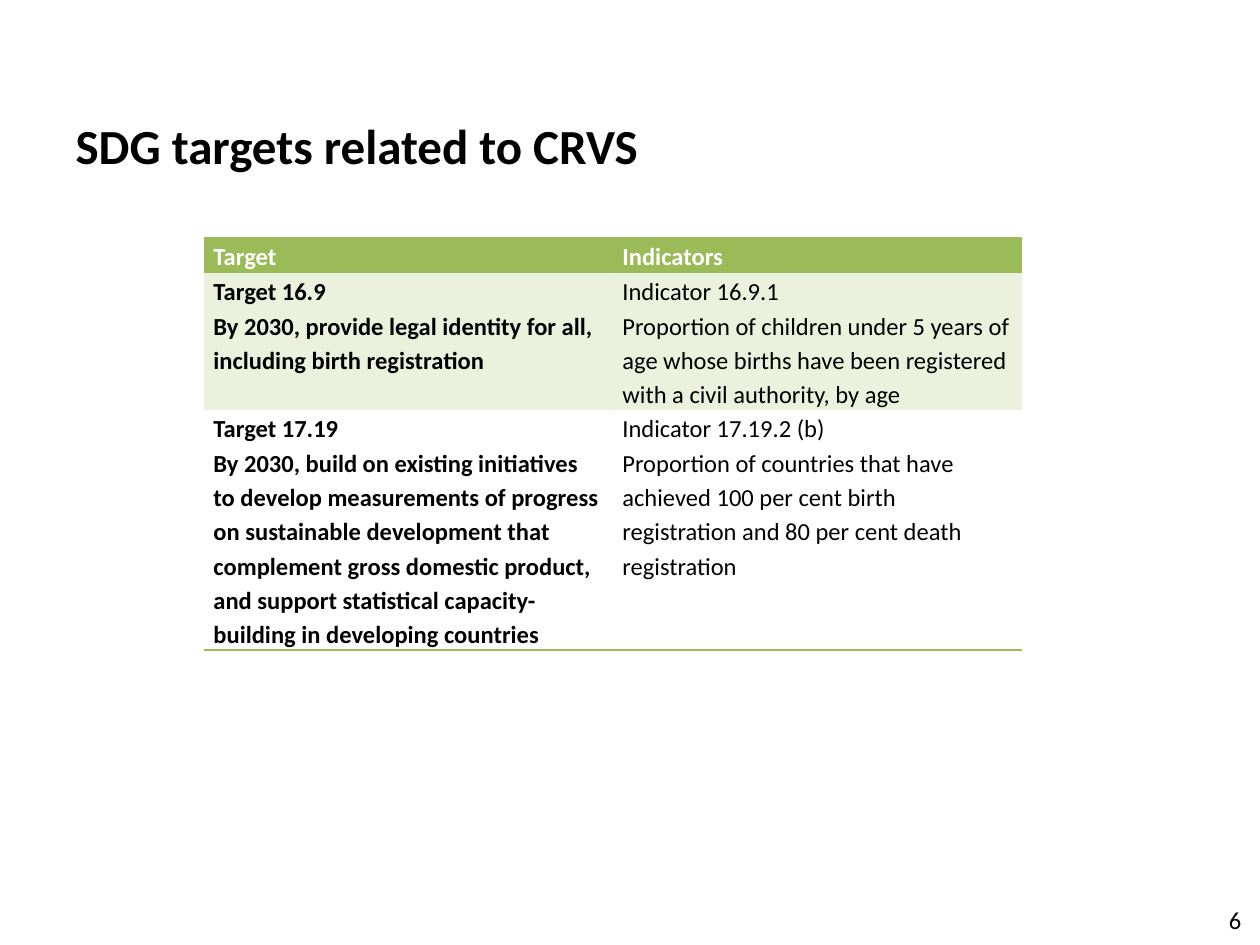
import dataclasses

import lxml.etree
import pptx
import pptx.dml.color
import pptx.enum.text
import pptx.oxml.ns
import pptx.util

Pt = pptx.util.Pt
PP_ALIGN = pptx.enum.text.PP_ALIGN
MSO_ANCHOR = pptx.enum.text.MSO_ANCHOR
NO_STYLE_ID = "{2D5ABB26-0587-4C30-8999-92F81FD0307C}"

HEADINGS = ["Target", "Indicators"]
GOALS = [
    [
        ["Target 16.9",
         "By 2030, provide legal identity for all, including birth registration"],
        ["Indicator 16.9.1",
         "Proportion of children under 5 years of age whose births have been "
         "registered with a civil authority, by age"],
    ],
    [
        ["Target 17.19",
         "By 2030, build on existing initiatives to develop measurements of "
         "progress on sustainable development that complement gross domestic "
         "product, and support statistical capacity-building in developing countries"],
        ["Indicator 17.19.2 (b)",
         "Proportion of countries that have achieved 100 per cent birth "
         "registration and 80 per cent death registration"],
    ],
]
ROW_HEIGHTS = [20, 78, 137]


@dataclasses.dataclass(frozen=True)
class Theme:
    """Colours, font and type sizes of the slide."""
    font: str = "Calibri"
    text: str = "000000"
    reverse: str = "FFFFFF"
    accent: str = "9BBB59"
    band_opacity: int = 20
    title_size: int = 28
    body_size: int = 14


THEME = Theme()


def rgb(color):
    """Turn a hex string into a colour."""
    return pptx.dml.color.RGBColor.from_string(color)


def write_text(frame, lines, size=THEME.body_size, color=THEME.text, bold=False,
               align=PP_ALIGN.LEFT, line_spacing=1.0):
    """Fill a text frame with one formatted paragraph per line."""
    frame.word_wrap = True
    for index, line in enumerate(lines):
        paragraph = frame.add_paragraph() if index else frame.paragraphs[0]
        paragraph.alignment = align
        paragraph.line_spacing = line_spacing
        run = paragraph.add_run()
        run.text = line
        run.font.name = THEME.font
        run.font.size = Pt(size)
        run.font.bold = bold
        run.font.color.rgb = rgb(color)


def add_element(parent, tag, **attributes):
    """Append a DrawingML element to its parent."""
    return lxml.etree.SubElement(parent, pptx.oxml.ns.qn(tag), attributes)


def add_border(cell, tag):
    """Draw an accent line on one edge of a cell."""
    properties = cell._tc.get_or_add_tcPr()
    line = add_element(properties, tag, w=str(Pt(1)))
    add_element(add_element(line, "a:solidFill"), "a:srgbClr", val=THEME.accent)
    properties.insert(0, line)


def fill_cell(cell, opacity):
    """Fill a cell with the accent colour at a percentage of opacity."""
    if not opacity:
        cell.fill.background()
        return
    cell.fill.solid()
    cell.fill.fore_color.rgb = rgb(THEME.accent)
    if opacity < 100:
        color = cell._tc.tcPr.find(".//" + pptx.oxml.ns.qn("a:srgbClr"))
        add_element(color, "a:alpha", val=str(opacity * 1000))


def place_title(slide, left, top, width, height):
    """Move and format the title placeholder."""
    title = slide.shapes.title
    title.left, title.top = Pt(left), Pt(top)
    title.width, title.height = Pt(width), Pt(height)
    title.text_frame.vertical_anchor = MSO_ANCHOR.MIDDLE
    write_text(title.text_frame, ["SDG targets related to CRVS"],
               size=THEME.title_size, bold=True)


def place_goals_table(slide, left, top, width, height):
    """Add the table of targets and their indicators."""
    rows = [[[heading] for heading in HEADINGS]] + GOALS
    table = slide.shapes.add_table(len(rows), len(HEADINGS), Pt(left), Pt(top),
                                   Pt(width), Pt(height)).table
    table.horz_banding = False
    table._tbl.tblPr.find(pptx.oxml.ns.qn("a:tableStyleId")).text = NO_STYLE_ID
    opacities = [100, THEME.band_opacity, 0]
    for row_index, row in enumerate(rows):
        is_header = row_index == 0
        table.rows[row_index].height = Pt(height * ROW_HEIGHTS[row_index] / sum(ROW_HEIGHTS))
        for column_index, lines in enumerate(row):
            cell = table.cell(row_index, column_index)
            cell.margin_left = cell.margin_right = Pt(5.4)
            cell.margin_top = cell.margin_bottom = 0
            fill_cell(cell, opacities[row_index])
            write_text(cell.text_frame, lines, line_spacing=1.15,
                       color=THEME.reverse if is_header else THEME.text,
                       bold=is_header or column_index == 0)
            if is_header:
                add_border(cell, "a:lnT")
            if row_index == len(rows) - 1:
                add_border(cell, "a:lnB")


def place_page_number(slide, left, top, width, height):
    """Add the page number at the right of its box."""
    box = slide.shapes.add_textbox(Pt(left), Pt(top), Pt(width), Pt(height))
    write_text(box.text_frame, ["6"], align=PP_ALIGN.RIGHT)


def main():
    """Build and save the slide."""
    presentation = pptx.Presentation()
    presentation.slide_width, presentation.slide_height = Pt(720), Pt(540)
    slide = presentation.slides.add_slide(presentation.slide_layouts[5])
    place_title(slide, 36, 62.6, 628.5, 41)
    place_goals_table(slide, 116.6, 136, 467.4, 235)
    place_page_number(slide, 548.6, 513.4, 167.8, 28.8)
    presentation.save("out.pptx")


if __name__ == "__main__":
    main()
